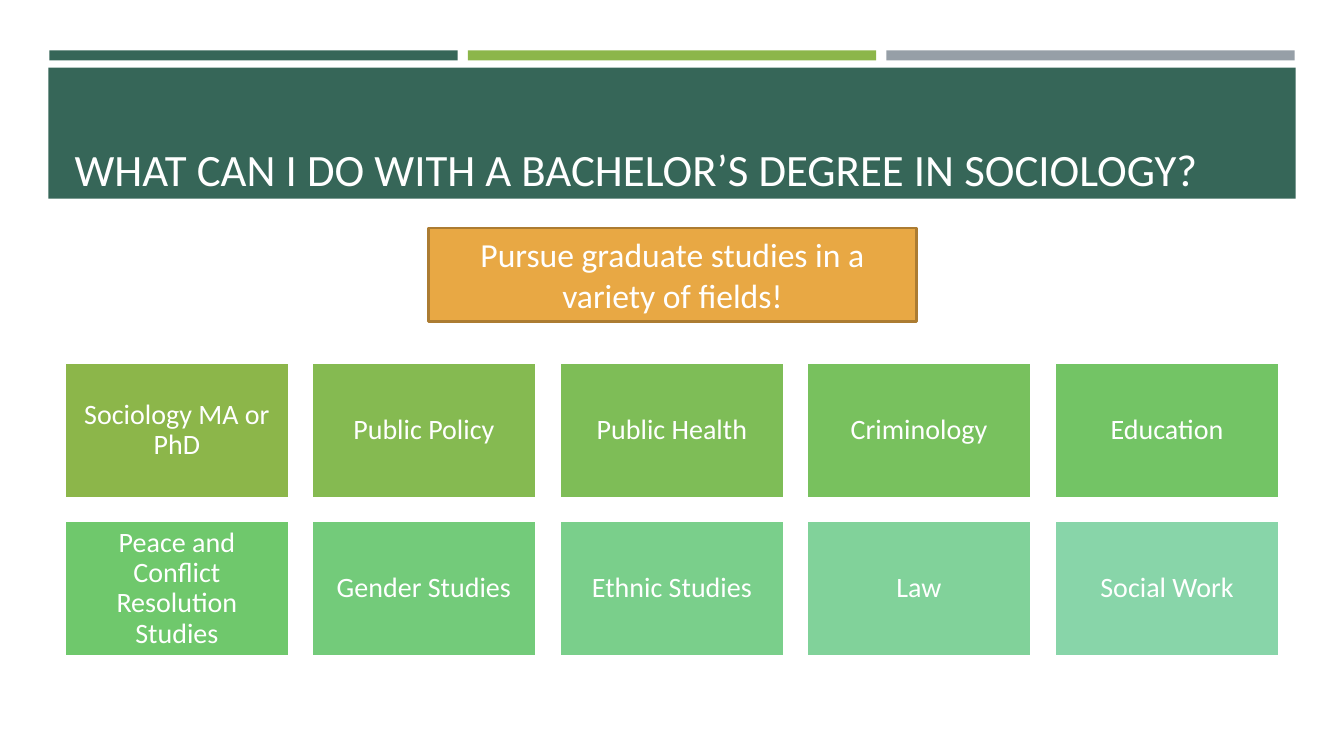
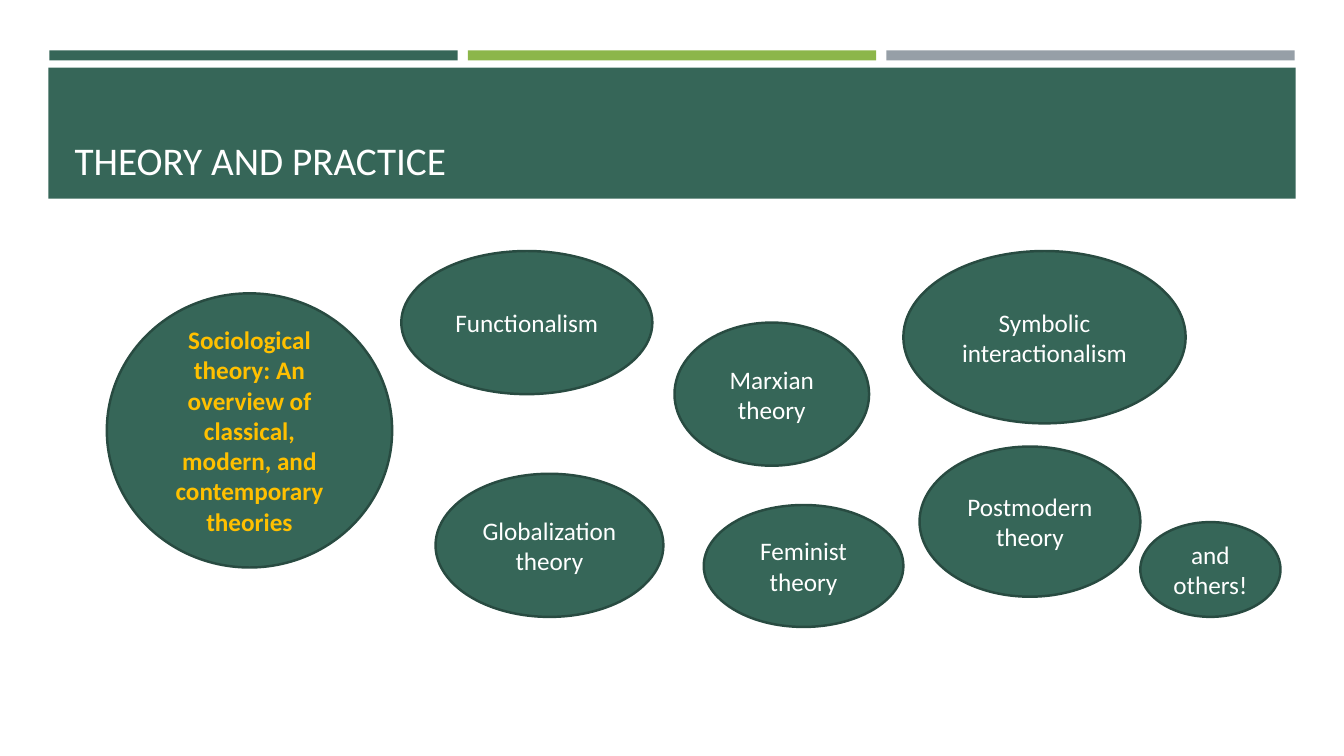
from collections import namedtuple
from dataclasses import dataclass

from pptx import Presentation
from pptx.dml.color import RGBColor as Rgb
from pptx.enum.shapes import MSO_SHAPE as Kind
from pptx.enum.text import MSO_ANCHOR as Anchor, MSO_AUTO_SIZE as Fit, PP_ALIGN as Align
from pptx.util import Emu, Pt

SCALE = 9144
Box = namedtuple("Box", "left top wide high")


@dataclass(frozen=True)
class Theme:
    font: str = "Calibri"
    green: str = "366658"
    edge: str = "284B41"
    lime: str = "8CB64A"
    gray: str = "969FA7"
    amber: str = "E8A844"
    rust: str = "AC7C32"
    gold: str = "FFC000"
    white: str = "FFFFFF"
    tints: tuple = ("8CB64A", "85BA51", "7EBD57", "78C15E", "73C465",
                    "6FC86C", "73CB7A", "7ACF8B", "81D29A", "88D5A9")
    large: int = 32
    head: int = 28
    call: int = 24
    tile: int = 20
    small: int = 18
    line: float = 1.75


LOOK = Theme()
BODY = Box(0, 200, 1333, 550)

FIELDS = ("Sociology MA or PhD", "Public Policy", "Public Health", "Criminology",
          "Education", "Peace and Conflict Resolution Studies", "Gender Studies",
          "Ethnic Studies", "Law", "Social Work")

THEORIES = (
    ("Functionalism", Box(398, 49, 249, 142)),
    ("Marxian theory", Box(669, 120, 193, 142)),
    ("Symbolic interactionalism", Box(896, 49, 280, 171)),
    ("Globalization theory", Box(432, 270, 226, 142)),
    ("Feminist theory", Box(698, 301, 198, 121)),
    ("Postmodern theory", Box(912, 243, 219, 149)),
    ("and others!", Box(1131, 318, 139, 94)),
)


def px(count):
    return Emu(count * SCALE)


def assign(item, values):
    for name, value in values.items():
        setattr(item, name, value)


def inside(area, box):
    return Box(area.left + box.left, area.top + box.top, box.wide, box.high)


def write(shape, text, size, color=LOOK.white, bold=False, align=Align.CENTER,
          anchor=Anchor.MIDDLE, space=1.0, inset=(10, 5)):
    side, edge = map(px, inset)
    frame = shape.text_frame
    frame.text = text
    assign(frame, dict(word_wrap=True, auto_size=Fit.NONE, vertical_anchor=anchor,
                       margin_left=side, margin_right=side,
                       margin_top=edge, margin_bottom=edge))
    para = frame.paragraphs[0]
    assign(para, dict(alignment=align, line_spacing=space))
    font = para.runs[0].font
    assign(font, dict(name=LOOK.font, size=Pt(size), bold=bold))
    font.color.rgb = Rgb.from_string(color)


def draw(slide, kind, box, fill, line=None):
    shape = slide.shapes.add_shape(kind, *map(px, box))
    shape.shadow.inherit = False
    shape.fill.solid()
    shape.fill.fore_color.rgb = Rgb.from_string(fill)
    if line:
        shape.line.color.rgb = Rgb.from_string(line)
        shape.line.width = Pt(LOOK.line)
    else:
        shape.line.fill.background()
    return shape


def add_bands(slide, area):
    bars = [(Box(1 + 415 * i, 0, 405, 10), color)
            for i, color in enumerate((LOOK.green, LOOK.lime, LOOK.gray))]
    bars.append((Box(0, 17, area.wide, 130), LOOK.green))
    tree = slide.slide_layout.shapes.element
    for mark, (box, color) in enumerate(bars, 20):
        band = draw(slide, Kind.RECTANGLE, inside(area, box), color)
        band.element.nvSpPr.cNvPr.set("id", str(mark))
        tree.insert(2, band.element)


def add_title(slide, box, text, size):
    title = slide.shapes.title
    assign(title, dict(zip(("left", "top", "width", "height"), map(px, box))))
    write(title, text, size, align=Align.LEFT, anchor=Anchor.BOTTOM, space=0.9)


def add_tiles(slide, area, names, cols=5):
    wide, high = 223, 134
    rows = len(names) // cols
    for i, (name, tint) in enumerate(zip(names, LOOK.tints)):
        row, col = divmod(i, cols)
        spot = Box(col * (area.wide - wide) // (cols - 1),
                   row * (area.high - high) // (rows - 1), wide, high)
        tile = draw(slide, Kind.RECTANGLE, inside(area, spot), tint, LOOK.white)
        write(tile, name, LOOK.tile, space=0.9, inset=(8, 8))


def add_call(slide, box, text):
    note = draw(slide, Kind.RECTANGLE, box, LOOK.amber, LOOK.rust)
    write(note, text, LOOK.call)


def add_oval(slide, box, text, **style):
    oval = draw(slide, Kind.OVAL, box, LOOK.green, LOOK.edge)
    write(oval, text, LOOK.small, **style)


def fill_degree(slide, area):
    add_title(slide, Box(64, 38, 1168, 162),
              "WHAT CAN I DO WITH A BACHELOR’S DEGREE IN SOCIOLOGY?", LOOK.large)
    add_tiles(slide, inside(area, Box(64, 160, 1205, 291)), FIELDS)
    add_call(slide, inside(area, Box(425, 26, 484, 93)),
             "Pursue graduate studies in a variety of fields!")


def fill_theory(slide, area):
    add_title(slide, Box(64, 77, 1206, 111), "THEORY AND PRACTICE", LOOK.head)
    add_oval(slide, inside(area, Box(106, 91, 283, 272)),
             "Sociological theory: An overview of classical, modern, "
             "and contemporary theories", color=LOOK.gold, bold=True)
    for name, box in THEORIES:
        add_oval(slide, inside(area, box), name)


def main():
    deck = Presentation()
    assign(deck, dict(slide_width=px(1333), slide_height=px(750)))
    layout = deck.slide_layouts[5]
    first, second = (deck.slides.add_slide(layout) for _ in range(2))
    add_bands(first, Box(48, 50, 1237, 147))
    fill_degree(first, BODY)
    fill_theory(second, BODY)
    deck.save("out.pptx")


if __name__ == "__main__":
    main()
